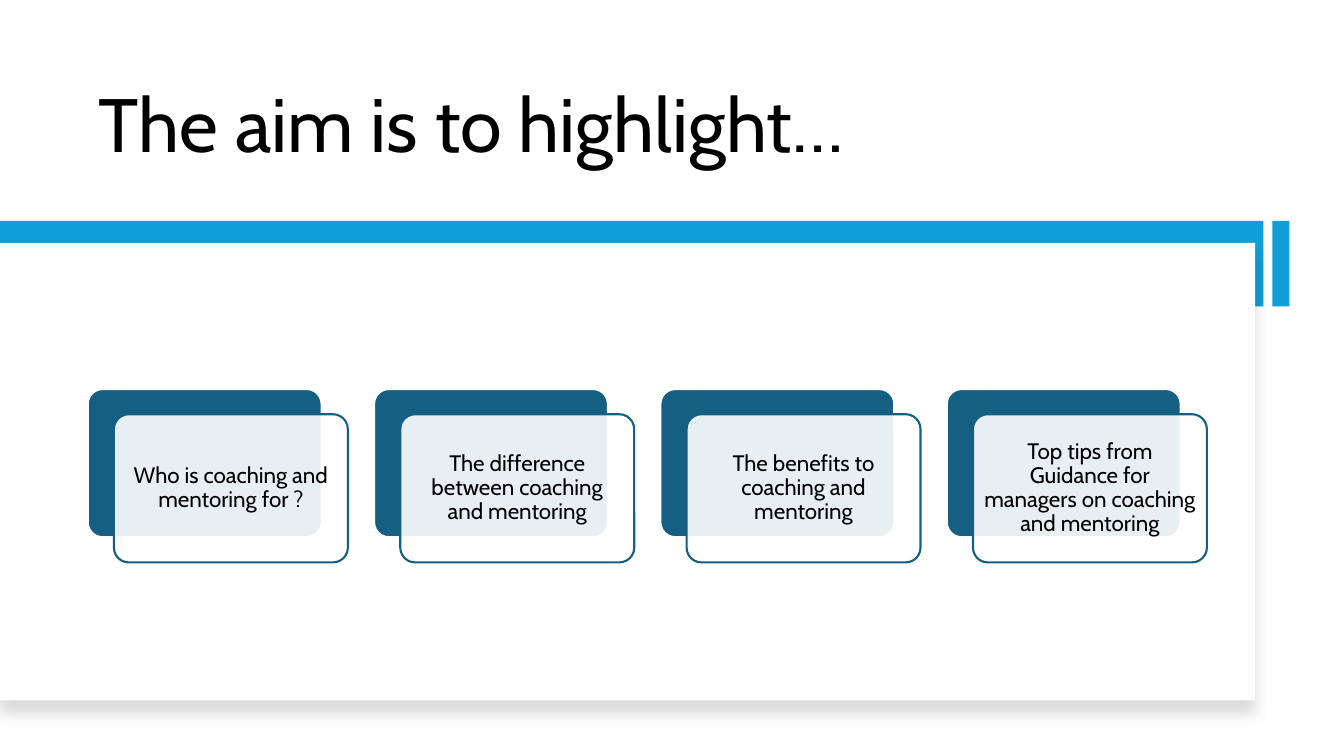
from lxml import etree
from pptx import Presentation
from pptx import util as u
from pptx.dml.color import RGBColor
from pptx.enum import shapes, text
from pptx.oxml.ns import qn

PX = 9144
FONT = "Cabin"
BLACK, WHITE, SKY, TEAL = "000000", "FFFFFF", "0F9ED5", "156082"
TOPICS = [
    "Who is coaching and mentoring for ?",
    "The difference between coaching and mentoring",
    "The benefits to coaching and mentoring",
    "Top tips from Guidance for managers on coaching and mentoring",
]
CARD_LEFT, CARD_TOP, CARD_PITCH = 87, 386, 284
CARD_WIDTH, CARD_HEIGHT = 232, 147
OVERLAY_SHIFT, CARD_INSET = 26, 7


def px(length):
    """Turn px into EMU."""
    return u.Emu(length * PX)


def colour(value):
    """Turn a hex string into a colour."""
    return RGBColor.from_string(value)


def set_alpha(parent, percent):
    """Give the colour inside an XML element an opacity."""
    srgb = next(parent.iter(qn("a:srgbClr")))
    etree.SubElement(srgb, qn("a:alpha"), val=str(percent * 1000))


def add_box(slide, left, top, width, height, fill, line=None,
            kind=shapes.MSO_SHAPE.RECTANGLE):
    """Add a filled shape with an optional outline."""
    shape = slide.shapes.add_shape(kind, px(left), px(top), px(width), px(height))
    shape.shadow.inherit = False
    shape.fill.solid()
    shape.fill.fore_color.rgb = colour(fill)
    if line:
        shape.line.color.rgb = colour(line)
        shape.line.width = u.Pt(1.5)
    else:
        shape.line.fill.background()
    return shape


def add_shadow(shape):
    """Cast a soft shadow below a shape."""
    effects = shape._element.spPr.find(qn("a:effectLst"))
    shadow = etree.SubElement(
        effects, qn("a:outerShdw"), blurRad=str(u.Pt(11)), dist=str(u.Pt(10)),
        dir="5400000", algn="t", rotWithShape="0")
    etree.SubElement(shadow, qn("a:srgbClr"), val=BLACK)
    set_alpha(shadow, 15)


def write(shape, wording, size, align, anchor):
    """Write one paragraph into a shape."""
    frame = shape.text_frame
    frame.word_wrap = True
    frame.vertical_anchor = anchor
    paragraph = frame.paragraphs[0]
    paragraph.text = wording
    paragraph.alignment = align
    paragraph.line_spacing = 0.9
    paragraph.font.name = FONT
    paragraph.font.size = u.Pt(size)
    paragraph.font.color.rgb = colour(BLACK)


def add_title(slide, wording):
    """Add the slide heading."""
    box = slide.shapes.add_textbox(px(88), px(42), px(1010), px(130))
    write(box, wording, 54, text.PP_ALIGN.LEFT, text.MSO_ANCHOR.BOTTOM)


def add_panel(slide):
    """Add the blue bars and the white panel over them."""
    add_box(slide, 1262, 219, 17, 85, SKY)
    add_box(slide, 0, 219, 1253, 85, SKY)
    add_shadow(add_box(slide, 0, 241, 1245, 454, WHITE))


def add_card(slide, left, wording):
    """Add a dark card with a translucent captioned card over it."""
    back = add_box(slide, left, CARD_TOP, CARD_WIDTH, CARD_HEIGHT, TEAL, WHITE,
                   shapes.MSO_SHAPE.ROUNDED_RECTANGLE)
    front = add_box(slide, left + OVERLAY_SHIFT, CARD_TOP + OVERLAY_SHIFT - 1,
                    CARD_WIDTH, CARD_HEIGHT, WHITE, TEAL,
                    shapes.MSO_SHAPE.ROUNDED_RECTANGLE)
    for shape in (back, front):
        shape.adjustments[0] = 0.1
    set_alpha(front._element.spPr.find(qn("a:solidFill")), 90)
    frame = front.text_frame
    frame.margin_left = frame.margin_right = px(CARD_INSET)
    frame.margin_top = frame.margin_bottom = px(CARD_INSET)
    write(front, wording, 16, text.PP_ALIGN.CENTER, text.MSO_ANCHOR.MIDDLE)


def main():
    """Build the slide and save it."""
    presentation = Presentation()
    presentation.slide_width = px(1333)
    presentation.slide_height = px(750)
    slide = presentation.slides.add_slide(presentation.slide_layouts[6])
    add_title(slide, "The aim is to highlight…")
    add_panel(slide)
    for index, topic in enumerate(TOPICS):
        add_card(slide, CARD_LEFT + index * CARD_PITCH, topic)
    presentation.save("out.pptx")


if __name__ == "__main__":
    main()
